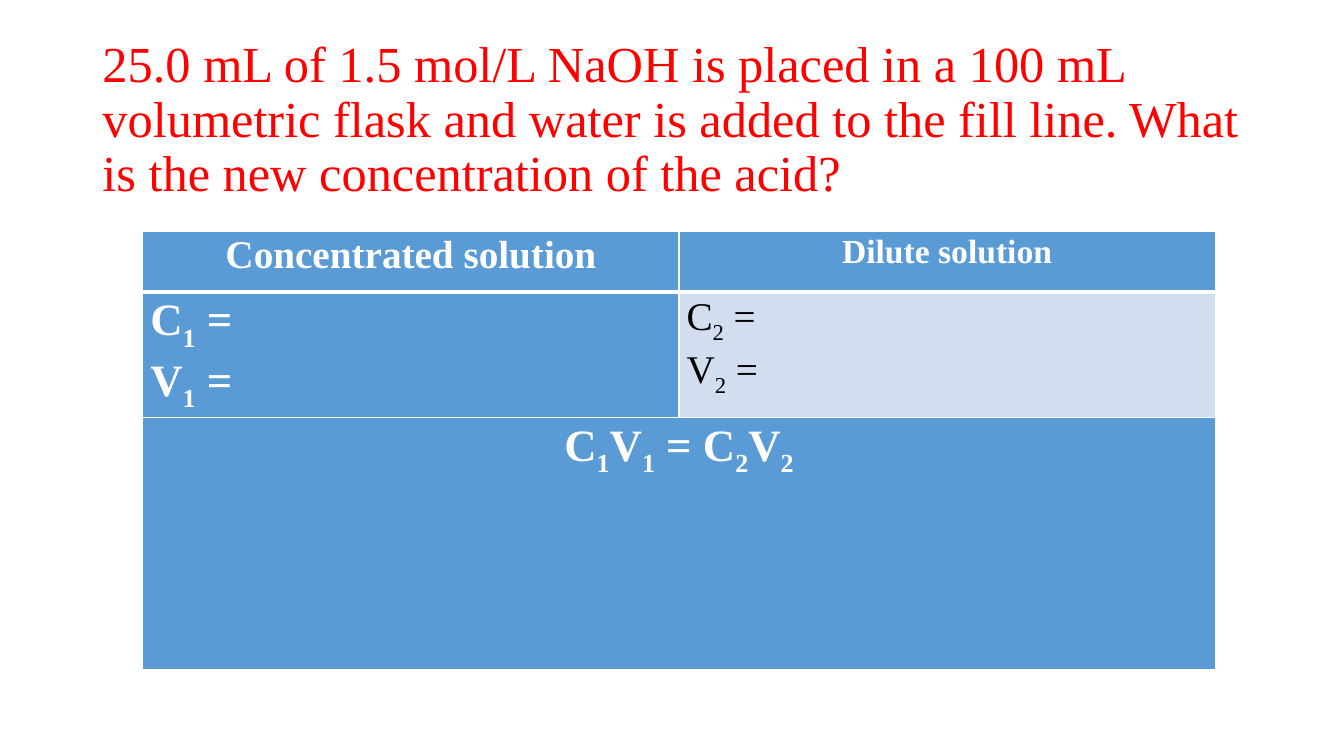
from lxml.etree import SubElement
from pptx import Presentation
from pptx.dml.color import RGBColor
from pptx.enum.text import MSO_ANCHOR, MSO_AUTO_SIZE, PP_ALIGN
from pptx.oxml.ns import qn
from pptx.util import Pt

LEFT, MID = PP_ALIGN.LEFT, PP_ALIGN.CENTER


def color(code):
    return RGBColor.from_string(code)


def write(frame, text, size=28, ink="FFFFFF", bold=False, align=LEFT,
          space=1.07, font="Times New Roman"):
    """Write lines of text; the character after each "_" is a subscript."""
    frame.word_wrap = True
    for i, line in enumerate(text.split("\n")):
        para = frame.add_paragraph() if i else frame.paragraphs[0]
        para.alignment = align
        para.line_spacing = space
        first, *rest = line.split("_")
        parts = [(first, False)]
        for piece in rest:
            parts += [(piece[0], True), (piece[1:], False)]
        for word, sub in parts:
            if not word:
                continue
            run = para.add_run()
            run.text = word
            run.font.name = font
            run.font.size = Pt(size)
            run.font.bold = bold
            run.font.color.rgb = color(ink)
            if sub:
                run._r.get_or_add_rPr().set("baseline", "-25000")


class Page:
    blue, pale, white, red = "5B9BD5", "D2DEEF", "FFFFFF", "FF0000"

    def __init__(self, deck):
        self.slide = deck.slides.add_slide(deck.slide_layouts[5])

    def title(self, text, left, top, width, height):
        box = self.slide.shapes.title
        box.left, box.top = Pt(left), Pt(top)
        box.width, box.height = Pt(width), Pt(height)
        frame = box.text_frame
        frame.auto_size = MSO_AUTO_SIZE.NONE
        frame.vertical_anchor = MSO_ANCHOR.MIDDLE
        write(frame, text, size=36, ink=self.red, space=0.9)

    def table(self, left, top, cols, rows):
        grid = self.slide.shapes.add_table(
            len(rows), len(cols), Pt(left), Pt(top),
            Pt(sum(cols)), Pt(sum(rows))).table
        for col, width in zip(grid.columns, cols):
            col.width = Pt(width)
        for row, height in zip(grid.rows, rows):
            row.height = Pt(height)
        return grid

    def edges(self, cell, top, base):
        props = cell._tc.get_or_add_tcPr()
        for side, width in zip("LRTB", (1, 1, top, base)):
            line = SubElement(props, qn(f"a:ln{side}"), w=str(Pt(width)))
            fill = SubElement(line, qn("a:solidFill"))
            SubElement(fill, qn("a:srgbClr"), val=self.white)

    def cell(self, cell, text, fill, top=1, base=1, **form):
        self.edges(cell, top, base)
        cell.fill.solid()
        cell.fill.fore_color.rgb = color(fill)
        cell.margin_left = cell.margin_right = Pt(5.4)
        cell.margin_top = cell.margin_bottom = Pt(0)
        if text:
            write(cell.text_frame, text, **form)


def main():
    deck = Presentation()
    deck.slide_width, deck.slide_height = Pt(960), Pt(540)
    page = Page(deck)

    # Question
    page.title("25.0 mL of 1.5 mol/L NaOH is placed in a 100 mL volumetric "
               "flask and water is added to the fill line. What is the new "
               "concentration of the acid?", 66, 28.75, 828, 115)

    # Dilution table
    grid = page.table(102, 165, (383, 383), (43.5, 89.5, 180.5))
    grid.cell(2, 0).merge(grid.cell(2, 1))

    # Header row
    heads = (("Concentrated solution", 28), ("Dilute solution", 24))
    for col, (text, size) in enumerate(heads):
        page.cell(grid.cell(0, col), text, page.blue, base=3,
                  size=size, bold=True, align=MID)

    # Known values
    page.cell(grid.cell(1, 0), "C_1 =\nV_1 =", page.blue, top=3,
              size=32, bold=True)
    page.cell(grid.cell(1, 1), "C_2 =\nV_2 =", page.pale, top=3,
              size=28, ink="000000")

    # Formula across both columns
    for col, text in enumerate(("C_1V_1 = C_2V_2", "")):
        page.cell(grid.cell(2, col), text, page.blue,
                  size=32, bold=True, align=MID)

    deck.save("out.pptx")


if __name__ == "__main__":
    main()
